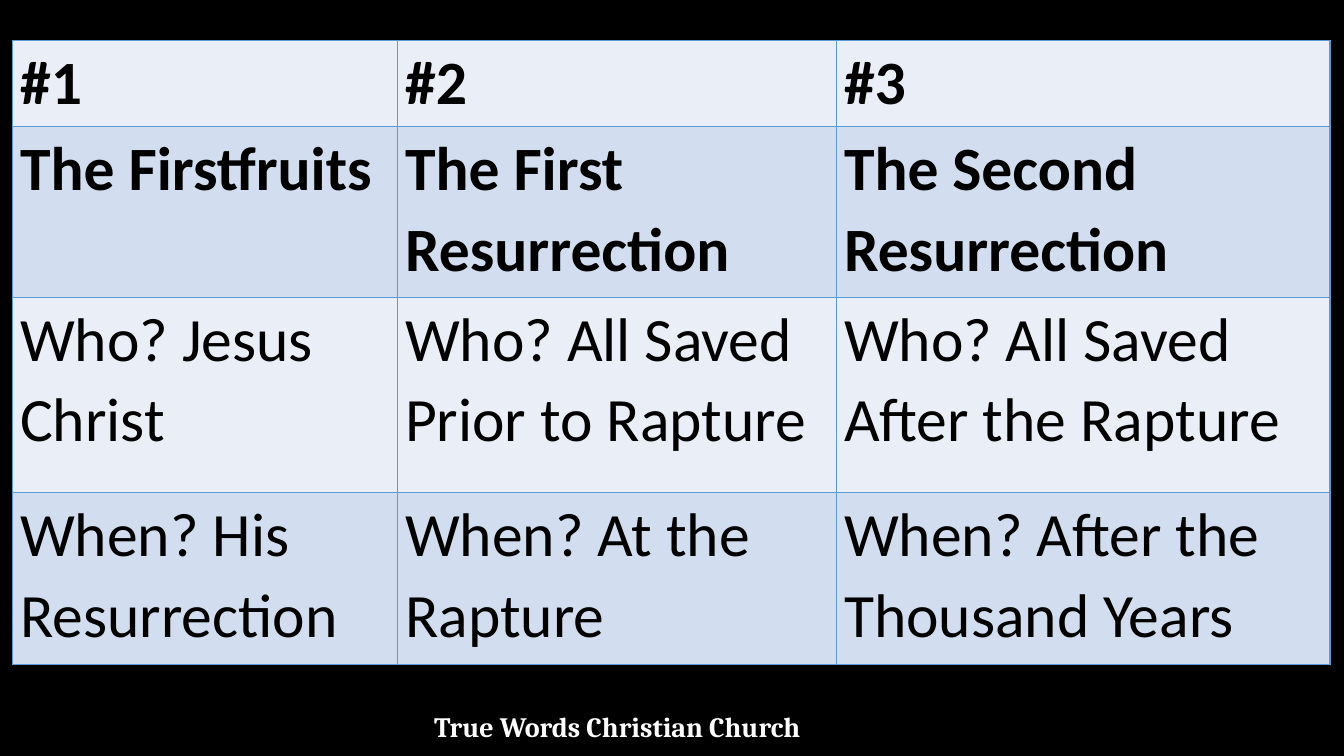
"""Build the slide that compares the three resurrections."""
from lxml import etree
from pptx import Presentation
from pptx.dml.color import RGBColor
from pptx.oxml import ns
from pptx.util import Pt

COLORS = {"night": "000000", "ink": "000000", "light": "EAEFF7",
          "band": "D2DEEF", "grid": "5B9BD5", "church": "FFFFFF", "halo": "808080"}
RESURRECTIONS = [
    ("#1", "#2", "#3"),
    ("The Firstfruits", "The First Resurrection", "The Second Resurrection"),
    ("Who? Jesus Christ", "Who? All Saved Prior to Rapture",
     "Who? All Saved After the Rapture"),
    ("When? His Resurrection", "When? At the Rapture",
     "When? After the Thousand Years"),
]
COLUMN_WIDTHS = (275, 313.5, 352.5)
ROW_HEIGHTS = (61.5, 122, 139.5, 122.5)
HEADING_ROWS = 2


class Deck:
    def __init__(self):
        self.prs = Presentation()
        self.prs.slide_width, self.prs.slide_height = Pt(960), Pt(540)
        self.slide = self.prs.slides.add_slide(self.prs.slide_layouts[6])
        self.paint(self.slide.background.fill, "night")

    def paint(self, fill, color):
        fill.solid()
        fill.fore_color.rgb = RGBColor.from_string(COLORS[color])

    def style(self, paragraph, font, size, color, bold):
        for run in paragraph.runs:
            run.font.name, run.font.size, run.font.bold = font, Pt(size), bold
            self.paint(run.font.fill, color)

    def border(self, cell, color, width):
        properties = cell._tc.get_or_add_tcPr()
        for position, side in enumerate(("lnL", "lnR", "lnT", "lnB")):
            edge = etree.Element(ns.qn(f"a:{side}"), w=str(Pt(width)))
            paint = etree.SubElement(edge, ns.qn("a:solidFill"))
            etree.SubElement(paint, ns.qn("a:srgbClr"), val=COLORS[color])
            properties.insert(position, edge)

    def cell(self, cell, words, fill, bold):
        cell.margin_left = cell.margin_right = Pt(5.4)
        cell.margin_top = cell.margin_bottom = 0
        cell.text_frame.text = words
        paragraph = cell.text_frame.paragraphs[0]
        paragraph.line_spacing = 1.07
        self.style(paragraph, "Calibri", 44, "ink", bold)
        self.paint(cell.fill, fill)
        self.border(cell, "grid", 1)

    def table(self, rows, left, top):
        grid = self.slide.shapes.add_table(
            len(rows), len(COLUMN_WIDTHS), Pt(left), Pt(top),
            Pt(sum(COLUMN_WIDTHS)), Pt(sum(ROW_HEIGHTS))).table
        grid.first_row = grid.horz_banding = False
        for column, width in zip(grid.columns, COLUMN_WIDTHS):
            column.width = Pt(width)
        for index, (row, height) in enumerate(zip(grid.rows, ROW_HEIGHTS)):
            row.height = Pt(height)
            for cell, words in zip(row.cells, rows[index]):
                self.cell(cell, words, ("light", "band")[index % 2],
                          index < HEADING_ROWS)

    def caption(self, words, left, top, width, height):
        frame = self.slide.shapes.add_textbox(
            Pt(left), Pt(top), Pt(width), Pt(height)).text_frame
        frame.word_wrap = True
        frame.text = words
        self.style(frame.paragraphs[0], "Cambria", 20, "church", True)
        self.shadow(frame.paragraphs[0].runs[0], "halo")

    def shadow(self, run, color):
        effects = etree.Element(ns.qn("a:effectLst"))
        cast = etree.SubElement(effects, ns.qn("a:outerShdw"), blurRad=str(Pt(3)),
                                dist=str(Pt(1)), dir="2700000")
        etree.SubElement(cast, ns.qn("a:srgbClr"), val=COLORS[color])
        run.font._element.find(ns.qn("a:solidFill")).addnext(effects)


def main():
    deck = Deck()
    deck.caption("True Words Christian Church", 303, 503.5, 323.5, 31.5)
    deck.table(RESURRECTIONS, 9, 29)
    deck.prs.save("out.pptx")


if __name__ == "__main__":
    main()
